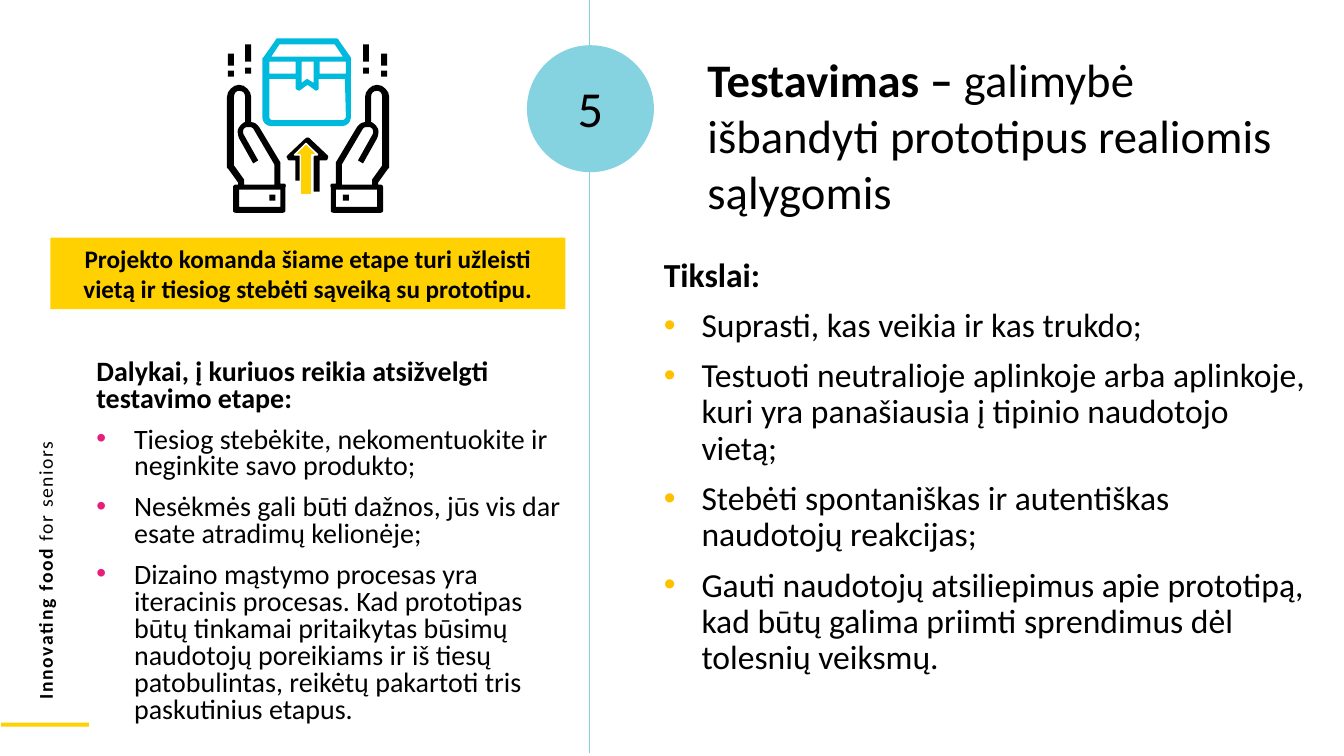
import pptx
import pptx.util
import pptx.dml.color
import pptx.enum.shapes
import pptx.enum.text
import pptx.oxml.ns
import lxml.etree

Cm, Pt = pptx.util.Cm, pptx.util.Pt
RGB = pptx.dml.color.RGBColor
SHAPE = pptx.enum.shapes.MSO_SHAPE
ALIGN = pptx.enum.text.PP_ALIGN
ANCHOR = pptx.enum.text.MSO_ANCHOR
qn = pptx.oxml.ns.qn

BLACK = RGB(0x00, 0x00, 0x00)
WHITE = RGB(0xFF, 0xFF, 0xFF)
YELLOW = RGB(0xFF, 0xD1, 0x00)
AMBER = RGB(0xFF, 0xC0, 0x00)
PINK = RGB(0xE9, 0x1E, 0x79)
AQUA = RGB(0x85, 0xD2, 0xE1)
CYAN = RGB(0x00, 0xBA, 0xDE)

FONT = "Calibri"
INDENT = Cm(0.95)
GRID = Cm(2.54) / 100  # icon outlines are drawn on this grid
FINE = 10  # steps within one grid unit

# Outlines: a pair is a corner, six numbers are a Bézier curve to the last pair.
PARCEL = [
    [(123, 19), (111, 2), (111, 1, 110, 0, 109, 0), (50, 0), (49, 0, 48, 1, 48, 2),
     (36, 19), (35, 19, 35, 20, 35, 20), (35, 78), (35, 83, 39, 87, 44, 87),
     (114, 87), (119, 87, 123, 83, 123, 78), (123, 20)],
    [(52, 6), (107, 6), (115, 18), (44, 18)],
    [(86, 23), (86, 44), (81, 41), (80, 40, 79, 40, 78, 41), (74, 44), (74, 23)],
    [(42, 23), (68, 23), (68, 35), (42, 35)],
    [(118, 35), (92, 35), (92, 23), (118, 23)],
    [(118, 78), (118, 79, 116, 81, 115, 81), (45, 81), (43, 81, 42, 79, 42, 78),
     (42, 40), (68, 40), (68, 49), (68, 50, 69, 51, 70, 51), (71, 52, 72, 52, 73, 51),
     (80, 46), (87, 51), (88, 52, 89, 52, 90, 51), (91, 51, 91, 50, 91, 49),
     (91, 40), (117, 40)],
]
ARROW = [
    [(82, 99), (81, 98, 79, 98, 78, 99), (60, 116), (59, 117, 59, 118, 60, 119),
     (60, 120, 61, 121, 62, 121), (68, 121), (68, 141), (74, 141), (74, 118),
     (74, 116, 73, 115, 71, 115), (70, 115), (80, 105), (91, 115), (89, 115),
     (88, 115, 86, 116, 86, 118), (86, 152), (92, 152), (92, 121), (98, 121),
     (99, 121, 100, 120, 100, 119), (101, 118, 100, 116, 100, 116)],
]
HAND = [
    [(56, 144), (53, 144), (53, 123), (32, 88), (30, 85, 27, 83, 24, 83), (24, 58),
     (24, 52, 18, 46, 12, 46), (6, 46, 0, 52, 0, 58), (0, 127), (0, 128, 0, 129, 1, 129),
     (11, 143), (11, 145), (9, 145), (7, 145, 6, 146, 6, 148), (6, 171),
     (6, 172, 7, 173, 9, 173), (55, 173), (57, 173, 58, 172, 58, 171), (58, 148),
     (59, 145, 58, 144, 56, 144)],
    [(7, 126), (7, 58), (7, 54, 9, 52, 12, 52), (16, 52, 18, 54, 18, 58), (18, 83),
     (18, 83, 17, 83, 16, 84), (14, 85, 12, 88, 11, 90), (10, 93, 11, 96, 12, 99),
     (26, 124), (31, 121), (17, 96), (16, 95, 16, 93, 16, 92), (16, 90, 17, 89, 19, 88),
     (20, 88, 22, 88, 23, 88), (25, 88, 26, 89, 27, 91), (47, 125), (47, 145),
     (17, 145), (17, 140)],
    [(53, 167), (12, 167), (12, 150), (53, 150)],
]
SPAN = 161  # icon width, for the mirrored hand
MARKS = [(x, y, 6, h) for xs, parts in (((18, 135), ((6, 17), (29, 6))),
                                        ((1, 153), ((15, 12), (32, 6))),
                                        ((42, 115), ((155, 6),)))
         for x in xs for y, h in parts]


def paint(shape, fill, line=None):
    shape.shadow.inherit = False
    shape.fill.solid()
    shape.fill.fore_color.rgb = fill
    if line is None:
        shape.line.fill.background()
    else:
        shape.line.color.rgb = line
        shape.line.width = Pt(1)
    return shape


def block(slide, kind, box, fill, line=None):
    return paint(slide.shapes.add_shape(kind, *map(Cm, box)), fill, line)


def label(slide, box):
    frame = slide.shapes.add_textbox(*map(Cm, box)).text_frame
    frame.word_wrap = True
    return frame


def write(para, text, size, bold=False):
    run = para.add_run()
    run.text = text
    run.font.name, run.font.size, run.font.bold = FONT, Pt(size), bold
    run.font.color.rgb = BLACK
    return run


def bullet(para, color):
    props = para._p.get_or_add_pPr()
    props.set("marL", str(INDENT))
    props.set("indent", str(-INDENT))
    tint = lxml.etree.SubElement(props, qn("a:buClr"))
    lxml.etree.SubElement(tint, qn("a:srgbClr"), val=str(color))
    lxml.etree.SubElement(props, qn("a:buFont"), typeface="Arial")
    lxml.etree.SubElement(props, qn("a:buChar"), char="•")


def points(ring, flip):
    """Flatten one outline to fine grid points, mirrored on request."""
    flat = []
    for part in ring:
        if len(part) == 2:
            flat.append(part)
            continue
        ctrl = [flat[-1], part[:2], part[2:4], part[4:]]
        for t in (0.25, 0.5, 0.75, 1):
            mix = ((1 - t) ** 3, 3 * t * (1 - t) ** 2, 3 * t * t * (1 - t), t ** 3)
            flat.append(tuple(sum(m * c[i] for m, c in zip(mix, ctrl)) for i in (0, 1)))
    return [(round(FINE * (SPAN - x if flip else x)), round(FINE * y)) for x, y in flat]


def trace(slide, left, top, rings, fill, flip=False):
    first, *rest = [points(ring, flip) for ring in rings]
    pen = slide.shapes.build_freeform(*first[0], scale=GRID / FINE)
    pen.add_line_segments(first[1:])
    for ring in rest:
        pen.move_to(*ring[0])
        pen.add_line_segments(ring[1:])
    paint(pen.convert_to_shape(Cm(left), Cm(top)), fill)


def icon(slide, left, top):
    """Two hands lifting a parcel."""
    trace(slide, left, top, PARCEL, CYAN)
    trace(slide, left, top, ARROW, BLACK)
    for flip in (False, True):
        trace(slide, left, top, HAND, BLACK, flip)
    unit = GRID / Cm(1)
    for x, y, w, h in MARKS:
        block(slide, SHAPE.RECTANGLE,
              (left + x * unit, top + y * unit, w * unit, h * unit), BLACK)
    block(slide, SHAPE.UP_ARROW, (left + 67 * unit, top + 104 * unit, 0.58, 1.3),
          YELLOW, WHITE)


def frame(slide, mid, high):
    """Divider, corner bar and upright project name."""
    rule = slide.shapes.add_connector(pptx.enum.shapes.MSO_CONNECTOR.STRAIGHT,
                                      Cm(mid), Cm(-0.08), Cm(mid), Cm(high - 0.08))
    rule.line.color.rgb, rule.line.width = AQUA, Pt(1)
    lxml.etree.SubElement(rule._element.spPr, qn("a:effectLst"))
    block(slide, SHAPE.RECTANGLE, (0.03, high - 0.84, 2.21, 0.1), YELLOW)
    side = slide.shapes.add_textbox(Cm(-8.43), Cm(7.87), Cm(19.15), Cm(0.86))
    side.rotation = 270
    side.text_frame.word_wrap = True
    para = side.text_frame.paragraphs[0]
    for text, bold in (("Innovating food ", True), ("for seniors", False)):
        write(para, text, 14, bold).font._element.set("spc", "110")


def badge(slide, left, top, size, text):
    block(slide, SHAPE.OVAL, (left, top, size, size), AQUA)
    para = label(slide, (left, top + 0.84, size, 2.39)).paragraphs[0]
    para.alignment, para.line_spacing = ALIGN.CENTER, 0.9
    write(para, text, 36)


def banner(slide, box, text):
    body = block(slide, SHAPE.RECTANGLE, box, YELLOW).text_frame
    body.word_wrap, body.vertical_anchor = True, ANCHOR.MIDDLE
    body.paragraphs[0].alignment = ALIGN.CENTER
    write(body.paragraphs[0], text, 18, True)


def points_list(slide, box, head, items, size, space, color):
    body = label(slide, box)
    body.paragraphs[0].line_spacing = space
    write(body.paragraphs[0], head, size, True)
    for item in items:
        para = body.add_paragraph()
        para.line_spacing, para.space_before = space, Pt(10)
        bullet(para, color)
        write(para, item, size)


def title(slide, box, lead, rest):
    para = label(slide, box).paragraphs[0]
    write(para, lead, 33.3, True)
    write(para, rest, 33.3)


def main():
    deck = pptx.Presentation()
    deck.slide_width, deck.slide_height = Cm(33.87), Cm(19.05)
    slide = deck.slides.add_slide(deck.slide_layouts[6])
    frame(slide, 14.86, 19.05)
    badge(slide, 13.28, 1.14, 3.2, "5")
    title(slide, (17.58, 1.17, 15.09, 4.57), "Testavimas – ",
          "galimybė išbandyti prototipus realiomis sąlygomis")
    points_list(slide, (16.48, 6.38, 16.81, 10.34), "Tikslai:", [
        "Suprasti, kas veikia ir kas trukdo;",
        "Testuoti neutralioje aplinkoje arba aplinkoje, kuri yra panašiausia į tipinio naudotojo vietą;",
        "Stebėti spontaniškas ir autentiškas naudotojų reakcijas;",
        "Gauti naudotojų atsiliepimus apie prototipą, kad būtų galima priimti sprendimus dėl tolesnių veiksmų.",
    ], 24, 0.9, AMBER)
    points_list(slide, (2.18, 8.94, 12.45, 9.55),
                "Dalykai, į kuriuos reikia atsižvelgti testavimo etape:", [
        "Tiesiog stebėkite, nekomentuokite ir neginkite savo produkto;",
        "Nesėkmės gali būti dažnos, jūs vis dar esate atradimų kelionėje;",
        "Dizaino mąstymo procesas yra iteracinis procesas. Kad prototipas būtų tinkamai pritaikytas "
        "būsimų naudotojų poreikiams ir iš tiesų patobulintas, reikėtų pakartoti tris paskutinius etapus.",
    ], 20, 0.8, PINK)
    banner(slide, (1.27, 5.99, 12.98, 1.8),
           "Projekto komanda šiame etape turi užleisti vietą ir tiesiog stebėti sąveiką su prototipu.")
    icon(slide, 5.72, 0.97)
    deck.save("out.pptx")


if __name__ == "__main__":
    main()
